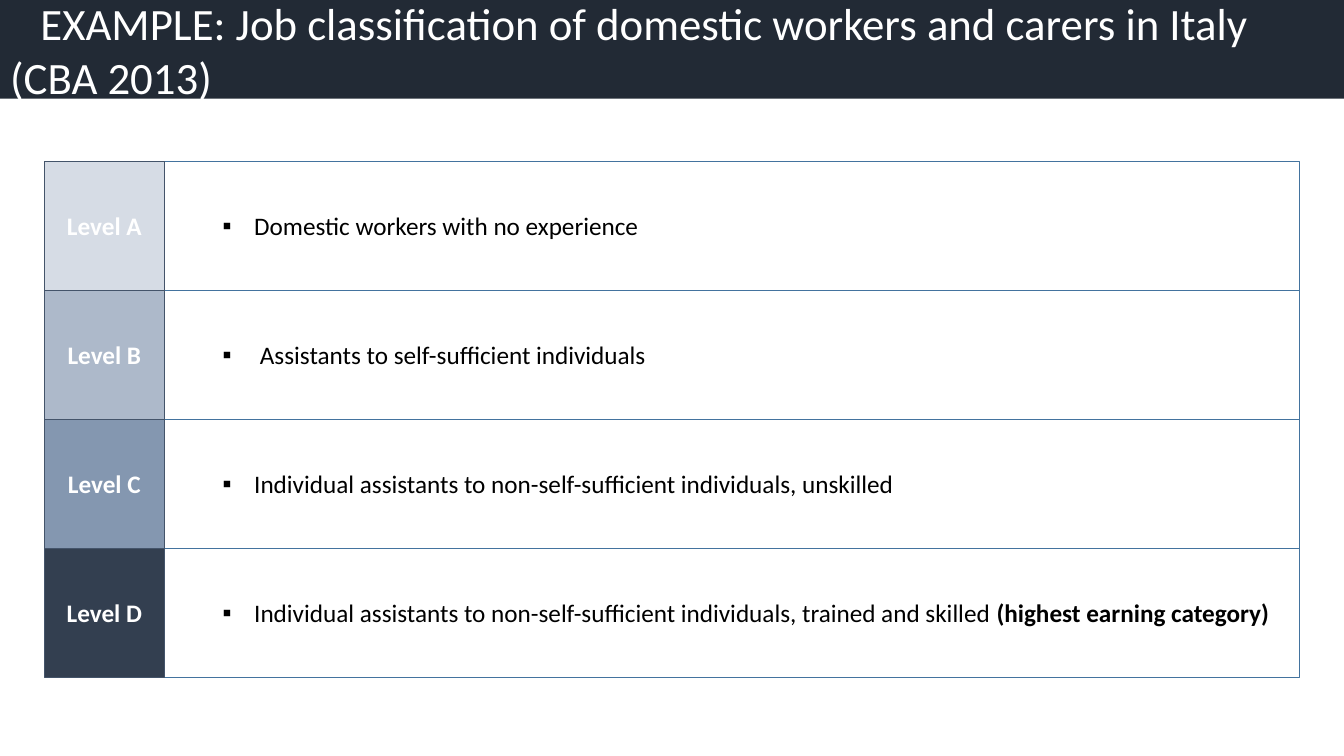
from dataclasses import dataclass

from lxml.etree import SubElement
from pptx import Presentation
from pptx.dml.color import RGBColor
from pptx.enum.shapes import MSO_SHAPE
from pptx.enum.text import MSO_ANCHOR, MSO_AUTO_SIZE, PP_ALIGN
from pptx.oxml.ns import qn
from pptx.shapes.autoshape import Shape
from pptx.slide import Slide
from pptx.text.text import _Paragraph as Para
from pptx.util import Pt


@dataclass(frozen=True)
class Theme:
    font: str = "Calibri"
    head: float = 32
    body: float = 18
    white: str = "FFFFFF"
    black: str = "000000"
    band: str = "222A35"
    edge: str = "44546A"
    rule: str = "43739E"


@dataclass(frozen=True)
class Level:
    name: str
    fill: str
    duty: str
    note: str = ""


@dataclass(frozen=True)
class Box:
    left: float
    top: float
    width: float
    height: float


THEME = Theme()
WIDTH, HEIGHT = 960, 540
BAND = Box(0, 0, WIDTH, 70.4)
TOP, STEP = 115.2, 92.16
LEVELS = [
    Level("Level A", "D6DCE5", "Domestic workers with no experience"),
    Level("Level B", "ADB9CA", " Assistants to self-sufficient individuals"),
    Level("Level C", "8497B0",
          "Individual assistants to non-self-sufficient individuals, unskilled"),
    Level("Level D", "333F50",
          "Individual assistants to non-self-sufficient individuals, trained and skilled ",
          "(highest earning category)"),
]


def add_run(para: Para, text: str, size: float, color: str, bold: bool = False) -> None:
    run = para.add_run()
    run.text = text
    run.font.name = THEME.font
    run.font.size = Pt(size)
    run.font.bold = bold
    run.font.color.rgb = RGBColor.from_string(color)


def set_dent(para: Para, left: float, first: float) -> None:
    props = para._p.get_or_add_pPr()
    props.set("marL", str(Pt(left)))
    props.set("indent", str(Pt(first)))


def add_mark(para: Para) -> None:
    set_dent(para, 58.5, -22.5)
    props = para._p.get_or_add_pPr()
    SubElement(props, qn("a:buFont"), typeface=THEME.font)
    SubElement(props, qn("a:buChar"), char="▪")


def add_cell(slide: Slide, box: Box, line: str, fill: str = "") -> Shape:
    cell = slide.shapes.add_shape(
        MSO_SHAPE.RECTANGLE, Pt(box.left), Pt(box.top), Pt(box.width), Pt(box.height))
    cell.shadow.inherit = False
    if fill:
        cell.fill.solid()
        cell.fill.fore_color.rgb = RGBColor.from_string(fill)
    else:
        cell.fill.background()
    cell.line.color.rgb = RGBColor.from_string(line)
    cell.line.width = Pt(1)
    cell.text_frame.word_wrap = True
    cell.text_frame.vertical_anchor = MSO_ANCHOR.MIDDLE
    return cell


def add_title(slide: Slide) -> None:
    title = slide.shapes.title
    title.left, title.top = Pt(BAND.left), Pt(BAND.top)
    title.width, title.height = Pt(BAND.width), Pt(BAND.height)
    title.fill.solid()
    title.fill.fore_color.rgb = RGBColor.from_string(THEME.band)
    frame = title.text_frame
    frame.auto_size = MSO_AUTO_SIZE.NONE
    frame.word_wrap = True
    frame.vertical_anchor = MSO_ANCHOR.MIDDLE
    para = frame.paragraphs[0]
    para.alignment = PP_ALIGN.LEFT
    set_dent(para, 0, 21.7)
    add_run(para, "EXAMPLE: Job classification of domestic workers and carers in Italy (CBA 2013)",
            THEME.head, THEME.white)


def add_duty(slide: Slide, level: Level, top: float) -> None:
    cell = add_cell(slide, Box(116, top, 812.16, STEP), THEME.rule)
    para = cell.text_frame.paragraphs[0]
    para.alignment = PP_ALIGN.LEFT
    add_mark(para)
    add_run(para, level.duty, THEME.body, THEME.black)
    if level.note:
        add_run(para, level.note, THEME.body, THEME.black, True)


def add_name(slide: Slide, level: Level, top: float) -> None:
    cell = add_cell(slide, Box(31.7, top, 85.7, STEP), THEME.edge, level.fill)
    para = cell.text_frame.paragraphs[0]
    para.alignment = PP_ALIGN.CENTER
    add_run(para, level.name, THEME.body, THEME.white, True)


def main() -> None:
    deck = Presentation()
    deck.slide_width, deck.slide_height = Pt(WIDTH), Pt(HEIGHT)
    slide = deck.slides.add_slide(deck.slide_layouts[5])
    add_title(slide)
    for draw in (add_duty, add_name):
        for row, level in enumerate(LEVELS):
            draw(slide, level, TOP + row * STEP)
    deck.save("out.pptx")


if __name__ == "__main__":
    main()
